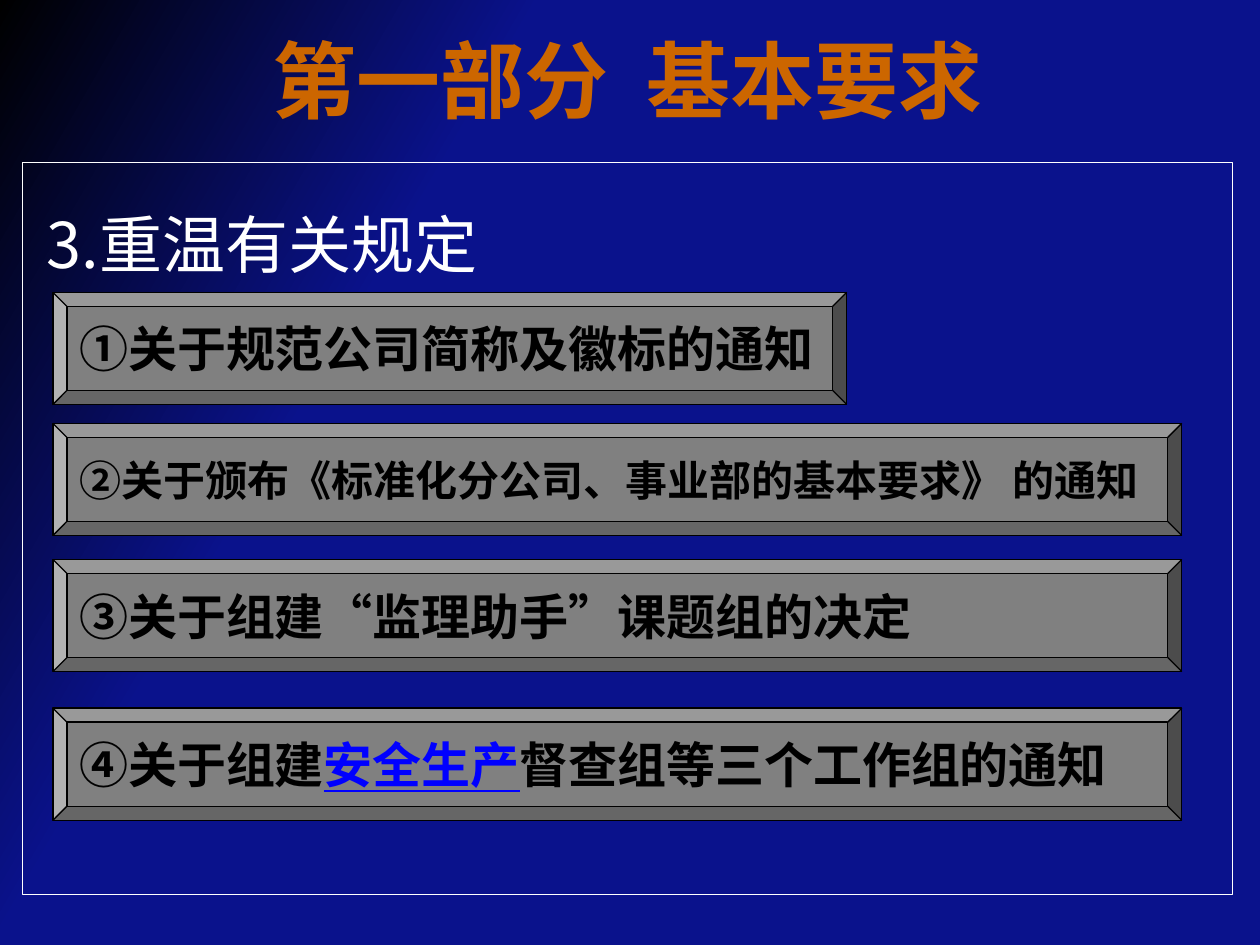
from dataclasses import dataclass

from pptx import Presentation
from pptx.dml.color import RGBColor
from pptx.enum.shapes import MSO_SHAPE
from pptx.enum.text import MSO_ANCHOR, MSO_AUTO_SIZE, PP_ALIGN
from pptx.util import Inches, Pt

FONT = "Noto Sans CJK SC"
COLORS = {
    "night": "000000",
    "navy": "0A128C",
    "title": "CC6600",
    "white": "FFFFFF",
    "bar": "808080",
    "ink": "000000",
    "term": "0000FF",
}


@dataclass
class Span:
    text: str
    color: str = "ink"
    underline: bool = False


@dataclass
class Bar:
    top: float
    width: float
    size: int
    spans: list[Span]


BARS = [
    Bar(2.32, 6.3, 28, [Span("①关于规范公司简称及徽标的通知")]),
    Bar(3.36, 8.96, 24, [Span("②关于颁布《标准化分公司、事业部的基本要求》 的通知")]),
    Bar(4.44, 8.96, 28, [Span("③关于组建“监理助手”课题组的决定")]),
    Bar(5.62, 8.96, 28, [
        Span("④关于组建"),
        Span("安全生产", "term", True),
        Span("督查组等三个工作组的通知"),
    ]),
]


def rgb(name: str) -> RGBColor:
    return RGBColor.from_string(COLORS[name])


def place(sp, left: float, top: float, width: float, height: float) -> None:
    sp.left, sp.top = Inches(left), Inches(top)
    sp.width, sp.height = Inches(width), Inches(height)


def add_run(p, span: Span, size: int, bold: bool):
    r = p.add_run()
    r.text = span.text
    r.font.size = Pt(size)
    r.font.bold = bold
    r.font.underline = span.underline
    r.font.name = FONT
    r.font.color.rgb = rgb(span.color)
    rPr = r._r.get_or_add_rPr()
    ea = rPr.makeelement(rPr.find("{*}latin").tag.replace("latin", "ea"), {"typeface": FONT})
    rPr.find("{*}latin").addnext(ea)
    return r


def paint_background(s) -> None:
    fill = s.background.fill
    fill.gradient()
    fill.gradient_angle = 330
    for stop, (color, position) in zip(fill.gradient_stops, [("night", 0), ("navy", 0.3)]):
        stop.color.rgb = rgb(color)
        stop.position = position


def fill_title(sp) -> None:
    place(sp, 0.18, 0, 9.6, 1.25)
    tf = sp.text_frame
    tf.auto_size = MSO_AUTO_SIZE.NONE
    tf.vertical_anchor = MSO_ANCHOR.MIDDLE
    p = tf.paragraphs[0]
    p.alignment = PP_ALIGN.CENTER
    add_run(p, Span("第一部分", "title"), 48, True)
    gap = add_run(p, Span(" ", "title"), 48, True)
    gap._r.get_or_add_rPr().set("spc", "1100")
    add_run(p, Span("基本要求", "title"), 48, True)


def fill_body(sp) -> None:
    place(sp, 0.18, 1.29, 9.6, 5.81)
    sp.line.color.rgb = rgb("white")
    sp.line.width = Pt(0.75)
    tf = sp.text_frame
    tf.auto_size = MSO_AUTO_SIZE.NONE
    tf.vertical_anchor = MSO_ANCHOR.TOP
    tf.margin_left, tf.margin_top = Inches(0.19), Inches(0.04)
    p = tf.paragraphs[0]
    pPr = p._p.get_or_add_pPr()
    pPr.set("marL", "0")
    pPr.set("indent", "0")
    pPr.append(pPr.makeelement(sp._element.nsmap["a"].join("{}") + "buNone", {}))
    p.line_spacing = 1.5
    p.space_before = Pt(0)
    add_run(p, Span("3.重温有关规定", "white"), 36, False)


def add_bar(s, bar: Bar) -> None:
    sp = s.shapes.add_shape(MSO_SHAPE.BEVEL, Inches(0.42), Inches(bar.top),
                            Inches(bar.width), Inches(0.89))
    sp.adjustments[0] = 0.125
    sp.shadow.inherit = False
    sp.fill.solid()
    sp.fill.fore_color.rgb = rgb("bar")
    sp.line.color.rgb = rgb("ink")
    sp.line.width = Pt(0.75)
    tf = sp.text_frame
    tf.word_wrap = True
    tf.margin_right = 0
    tf.vertical_anchor = MSO_ANCHOR.MIDDLE
    p = tf.paragraphs[0]
    p.alignment = PP_ALIGN.LEFT
    for span in bar.spans:
        add_run(p, span, bar.size, True)


def main() -> None:
    prs = Presentation()
    prs.slide_width, prs.slide_height = Inches(10), Inches(7.5)
    s = prs.slides.add_slide(prs.slide_layouts[1])
    paint_background(s)
    fill_title(s.shapes.title)
    fill_body(s.placeholders[1])
    for bar in BARS:
        add_bar(s, bar)
    prs.save("out.pptx")


if __name__ == "__main__":
    main()
